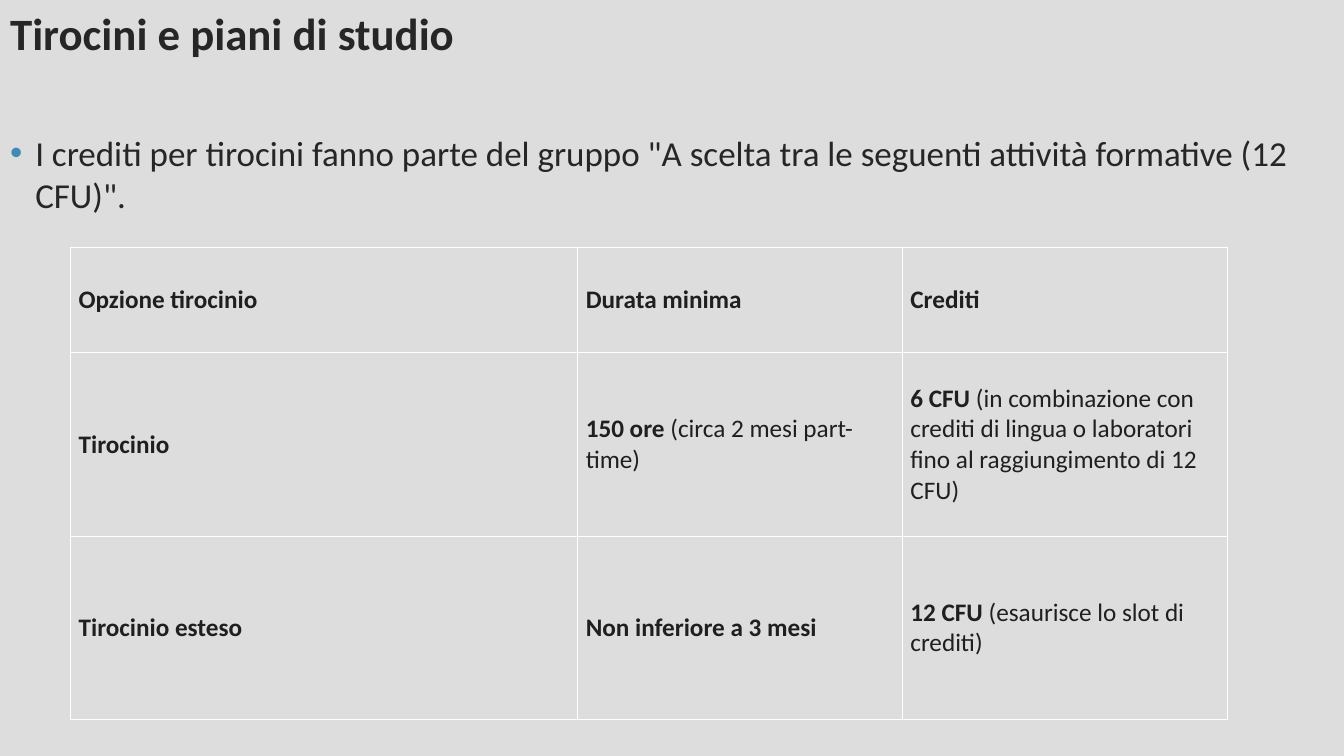
from pptx import Presentation
from pptx.dml.color import RGBColor
from pptx.enum.text import MSO_ANCHOR, MSO_AUTO_SIZE, PP_ALIGN
from pptx.oxml.ns import qn
from pptx.util import Pt
from lxml import etree

EMU_PER_PX = 9144  # 100 px to the inch
LEFT = PP_ALIGN.LEFT
TOP, MIDDLE = MSO_ANCHOR.TOP, MSO_ANCHOR.MIDDLE
NO_AUTOFIT = MSO_AUTO_SIZE.NONE

TITLE = "Tirocini e piani di studio"
CREDIT_RULE = ('I crediti per tirocini fanno parte del gruppo '
               '"A scelta tra le seguenti attività formative (12 CFU)".')

# Each cell holds its bold lead and the regular text after it.
OPTIONS = [
    [("Opzione tirocinio", ""), ("Durata minima", ""), ("Crediti", "")],
    [("Tirocinio", ""),
     ("150 ore", " (circa 2 mesi part-time)"),
     ("6 CFU", " (in combinazione con crediti di lingua o laboratori "
               "fino al raggiungimento di 12 CFU)")],
    [("Tirocinio esteso", ""),
     ("Non inferiore a 3 mesi", ""),
     ("12 CFU", " (esaurisce lo slot di crediti)")],
]


def px(length):
    return length * EMU_PER_PX


def rgb(color):
    return RGBColor.from_string(color)


class InternshipSlide:
    font = "Calibri"
    background = "DDDDDD"
    ink = "262626"
    table_ink = "1F1F1F"
    accent = "418AB3"
    border = "FFFFFF"

    def __init__(self, presentation):
        self.slide = presentation.slides.add_slide(presentation.slide_layouts[1])
        fill = self.slide.background.fill
        fill.solid()
        fill.fore_color.rgb = rgb(self.background)

    def style_run(self, run, size, color, bold):
        run.font.name = self.font
        run.font.size = Pt(size)
        run.font.color.rgb = rgb(color)
        run.font.bold = bold

    def fill_placeholder(self, index, text, box, size, bold):
        holder = self.slide.placeholders[index]
        holder.left, holder.top, holder.width, holder.height = map(px, box)
        frame = holder.text_frame
        frame.text = text
        frame.word_wrap = True
        frame.auto_size = NO_AUTOFIT
        frame.vertical_anchor = TOP
        paragraph = frame.paragraphs[0]
        paragraph.alignment = LEFT
        paragraph.space_before = Pt(0)
        self.style_run(paragraph.runs[0], size, self.ink, bold)
        return paragraph

    def title(self, text, box):
        self.fill_placeholder(0, text, box, 32, True)

    def bullet(self, text, box):
        paragraph = self.fill_placeholder(1, text, box, 25, False)
        properties = paragraph._p.get_or_add_pPr()
        properties.set("marL", str(px(25)))
        properties.set("indent", str(px(-25)))
        bullet_color = etree.SubElement(properties, qn("a:buClr"))
        etree.SubElement(bullet_color, qn("a:srgbClr"), val=self.accent)
        etree.SubElement(properties, qn("a:buFont"), typeface="Arial")
        etree.SubElement(properties, qn("a:buChar"), char="•")

    def table(self, rows, left, top, widths, heights):
        table = self.slide.shapes.add_table(
            len(heights), len(widths), px(left), px(top),
            px(sum(widths)), px(sum(heights))).table
        table.first_row = table.horz_banding = False
        for column, width in zip(table.columns, widths):
            column.width = px(width)
        for row, height, entries in zip(table.rows, heights, rows):
            row.height = px(height)
            for cell, (lead, detail) in zip(row.cells, entries):
                self.fill_cell(cell, lead, detail)

    def fill_cell(self, cell, lead, detail):
        cell.vertical_anchor = MIDDLE
        cell.margin_left = cell.margin_right = px(8)
        cell.margin_top = cell.margin_bottom = px(6)
        paragraph = cell.text_frame.paragraphs[0]
        paragraph.text = lead
        self.style_run(paragraph.runs[0], 18, self.table_ink, True)
        if detail:
            extra = paragraph.add_run()
            extra.text = detail
            self.style_run(extra, 18, self.table_ink, False)
        self.outline_cell(cell)
        cell.fill.background()

    def outline_cell(self, cell):
        properties = cell._tc.get_or_add_tcPr()
        for side in ("lnL", "lnR", "lnT", "lnB"):
            line = etree.SubElement(properties, qn(f"a:{side}"), w=str(Pt(0.5)))
            solid = etree.SubElement(line, qn("a:solidFill"))
            etree.SubElement(solid, qn("a:srgbClr"), val=self.border)


def main():
    presentation = Presentation()
    presentation.slide_width, presentation.slide_height = px(1333), px(750)
    page = InternshipSlide(presentation)
    page.title(TITLE, (0, 1, 1320, 70))
    page.bullet(CREDIT_RULE, (0, 125, 1320, 100))
    page.table(OPTIONS, 70, 245, (503, 322, 322), (105, 182, 182))
    presentation.save("out.pptx")


if __name__ == "__main__":
    main()
